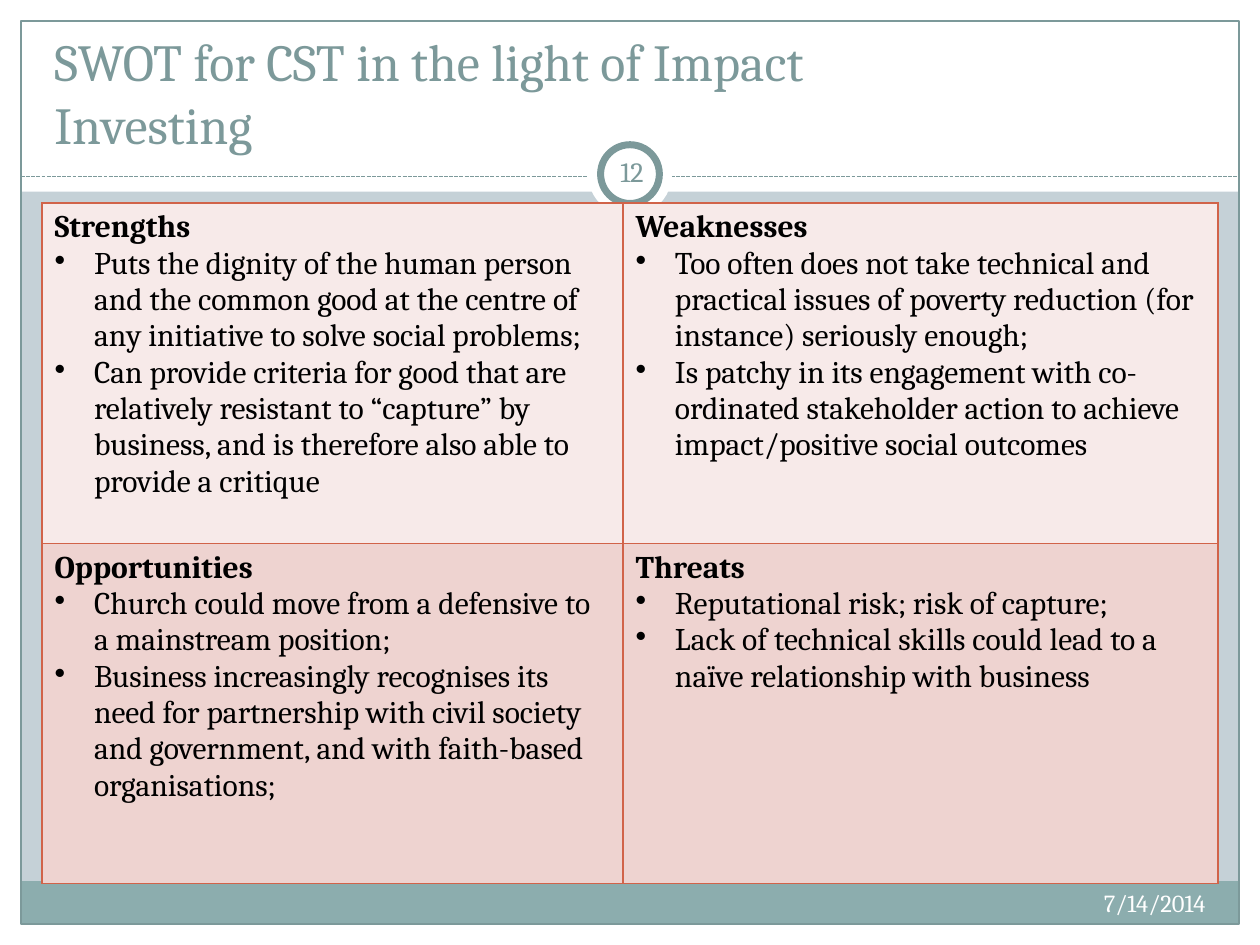
import pptx
import pptx.dml.color
import pptx.enum.dml
import pptx.enum.shapes
import pptx.enum.text
import pptx.oxml
import pptx.oxml.ns
import pptx.util

Pt = pptx.util.Pt
RGBColor = pptx.dml.color.RGBColor
SHAPE = pptx.enum.shapes.MSO_SHAPE
ANCHOR = pptx.enum.text.MSO_ANCHOR
ALIGN = pptx.enum.text.PP_ALIGN

FONT = "Cambria"
WHITE = RGBColor(0xFF, 0xFF, 0xFF)
BLACK = RGBColor(0x00, 0x00, 0x00)
PALE_BLUE = RGBColor(0xC5, 0xD1, 0xD7)
TEAL = RGBColor(0x8C, 0xAD, 0xAE)
SLATE = RGBColor(0x7C, 0x99, 0x9A)
ORANGE = RGBColor(0xD1, 0x63, 0x49)
ROW_FILLS = [RGBColor(0xF7, 0xEA, 0xE9), RGBColor(0xEE, 0xD3, 0xD0)]

WIDTH, HEIGHT = 720, 540
MARGIN = 12
HEADER_HEIGHT = 109.5

SWOT = [
    [
        ("Strengths", [
            "Puts the dignity of the human person and the common good at the "
            "centre of any initiative to solve social problems;",
            "Can provide criteria for good that are relatively resistant to "
            "“capture” by business, and is therefore also able to provide a critique",
        ]),
        ("Weaknesses", [
            "Too often does not take technical and practical issues of poverty "
            "reduction (for instance) seriously enough;",
            "Is patchy in its engagement with co-ordinated stakeholder action to "
            "achieve impact/positive social outcomes",
        ]),
    ],
    [
        ("Opportunities", [
            "Church could move from a defensive to a mainstream position;",
            "Business increasingly recognises its need for partnership with civil "
            "society and government, and with faith-based organisations;",
        ]),
        ("Threats", [
            "Reputational risk; risk of capture;",
            "Lack of technical skills could lead to a naïve relationship with business",
        ]),
    ],
]


def set_font(paragraph, size, color, bold=False):
    font = paragraph.font
    font.name, font.size, font.bold = FONT, Pt(size), bold
    font.color.rgb = color


def add_panel(slide, box, fill=None, line=None, line_width=0.75, kind=SHAPE.RECTANGLE):
    panel = slide.shapes.add_shape(kind, *map(Pt, box))
    panel.shadow.inherit = False
    if fill is None:
        panel.fill.background()
    else:
        panel.fill.solid()
        panel.fill.fore_color.rgb = fill
    if line is None:
        panel.line.fill.background()
    else:
        panel.line.color.rgb = line
        panel.line.width = Pt(line_width)


def add_label(slide, box, text, size, color, align=ALIGN.LEFT, anchor=ANCHOR.TOP, inset=None):
    frame = slide.shapes.add_textbox(*map(Pt, box)).text_frame
    frame.word_wrap = True
    frame.vertical_anchor = anchor
    if inset is not None:
        frame.margin_left = frame.margin_right = Pt(inset)
        frame.margin_top = frame.margin_bottom = Pt(inset)
    paragraph = frame.paragraphs[0]
    paragraph.text = text
    paragraph.alignment = align
    set_font(paragraph, size, color)


def add_frame(slide, box):
    """White margins and header, footer band and thin outline inside the box."""
    left, top, width, height = box
    right, bottom = left + width, top + height
    add_panel(slide, (left, bottom - MARGIN, width, MARGIN), WHITE)
    add_panel(slide, (left, top, width, HEADER_HEIGHT), WHITE)
    add_panel(slide, (left, top, MARGIN, height), WHITE)
    add_panel(slide, (right - MARGIN, top, MARGIN, height), WHITE)
    inner_width = width - 2 * MARGIN
    add_panel(slide, (left + MARGIN, bottom - 36.5, inner_width, 24.5), TEAL)
    add_panel(slide, (left + MARGIN, top + MARGIN, inner_width, height - 2 * MARGIN), line=SLATE)


def add_divider(slide, left, right, y):
    divider = slide.shapes.add_connector(
        pptx.enum.shapes.MSO_CONNECTOR.STRAIGHT, Pt(left), Pt(y), Pt(right), Pt(y))
    divider.line.color.rgb = SLATE
    divider.line.width = Pt(0.75)
    divider.line.dash_style = pptx.enum.dml.MSO_LINE.SQUARE_DOT
    properties = divider._element.spPr
    properties.append(properties.makeelement(pptx.oxml.ns.qn("a:effectLst"), {}))


def add_page_badge(slide, box, number):
    left, top, size, _ = box
    rim = 7.2
    add_panel(slide, box, WHITE, kind=SHAPE.OVAL)
    ring = (left + rim, top + rim, size - 2 * rim, size - 2 * rim)
    add_panel(slide, ring, WHITE, SLATE, 4, SHAPE.OVAL)
    add_label(slide, (left + rim, top + 5, 36, 34.5), number, 16, SLATE,
              ALIGN.CENTER, ANCHOR.MIDDLE, inset=3.6)


def add_bullet(paragraph):
    properties = paragraph._p.get_or_add_pPr()
    properties.set("marL", str(Pt(22.5)))
    properties.set("indent", str(-Pt(22.5)))
    bullet = properties.makeelement(pptx.oxml.ns.qn("a:buChar"), {"char": "•"})
    properties.append(bullet)


def set_borders(cell, color):
    properties = cell._tc.get_or_add_tcPr()
    for position, side in enumerate(("lnL", "lnR", "lnT", "lnB")):
        border = pptx.oxml.parse_xml(
            f'<a:{side} {pptx.oxml.ns.nsdecls("a")} w="{Pt(1)}"><a:solidFill>'
            f'<a:srgbClr val="{color}"/></a:solidFill></a:{side}>')
        properties.insert(position, border)


def fill_quadrant(cell, heading, points, fill):
    cell.fill.solid()
    cell.fill.fore_color.rgb = fill
    set_borders(cell, ORANGE)
    title = cell.text_frame.paragraphs[0]
    title.text = heading
    set_font(title, 18, BLACK, bold=True)
    for point in points:
        paragraph = cell.text_frame.add_paragraph()
        paragraph.text = point
        add_bullet(paragraph)
        set_font(paragraph, 18, BLACK)


def add_swot_table(slide, box):
    left, top, width, height = box
    table = slide.shapes.add_table(2, 2, *map(Pt, box)).table
    table.first_row = table.horz_banding = False
    first_column = 332
    table.columns[0].width = Pt(first_column)
    table.columns[1].width = Pt(width - first_column)
    for row, (quadrants, fill) in enumerate(zip(SWOT, ROW_FILLS)):
        table.rows[row].height = Pt(height / 2)
        for column, (heading, points) in enumerate(quadrants):
            fill_quadrant(table.cell(row, column), heading, points, fill)


def main():
    deck = pptx.Presentation()
    deck.slide_width, deck.slide_height = Pt(WIDTH), Pt(HEIGHT)
    slide = deck.slides.add_slide(deck.slide_layouts[6])
    slide.background.fill.solid()
    slide.background.fill.fore_color.rgb = PALE_BLUE

    add_frame(slide, (0, 0, WIDTH, HEIGHT))
    add_divider(slide, MARGIN, WIDTH - MARGIN, 100.7)
    add_page_badge(slide, (336, 75.5, 48, 48), "12")
    add_label(slide, (24, 28, 554.5, 64), "SWOT for CST in the light of Impact Investing",
              29.7, SLATE, anchor=ANCHOR.BOTTOM)
    add_label(slide, (456, 504, 240, 28.8), "7/14/2014", 14, WHITE, ALIGN.RIGHT)
    add_swot_table(slide, (24, 116, 672, 389))
    deck.save("out.pptx")


if __name__ == "__main__":
    main()
